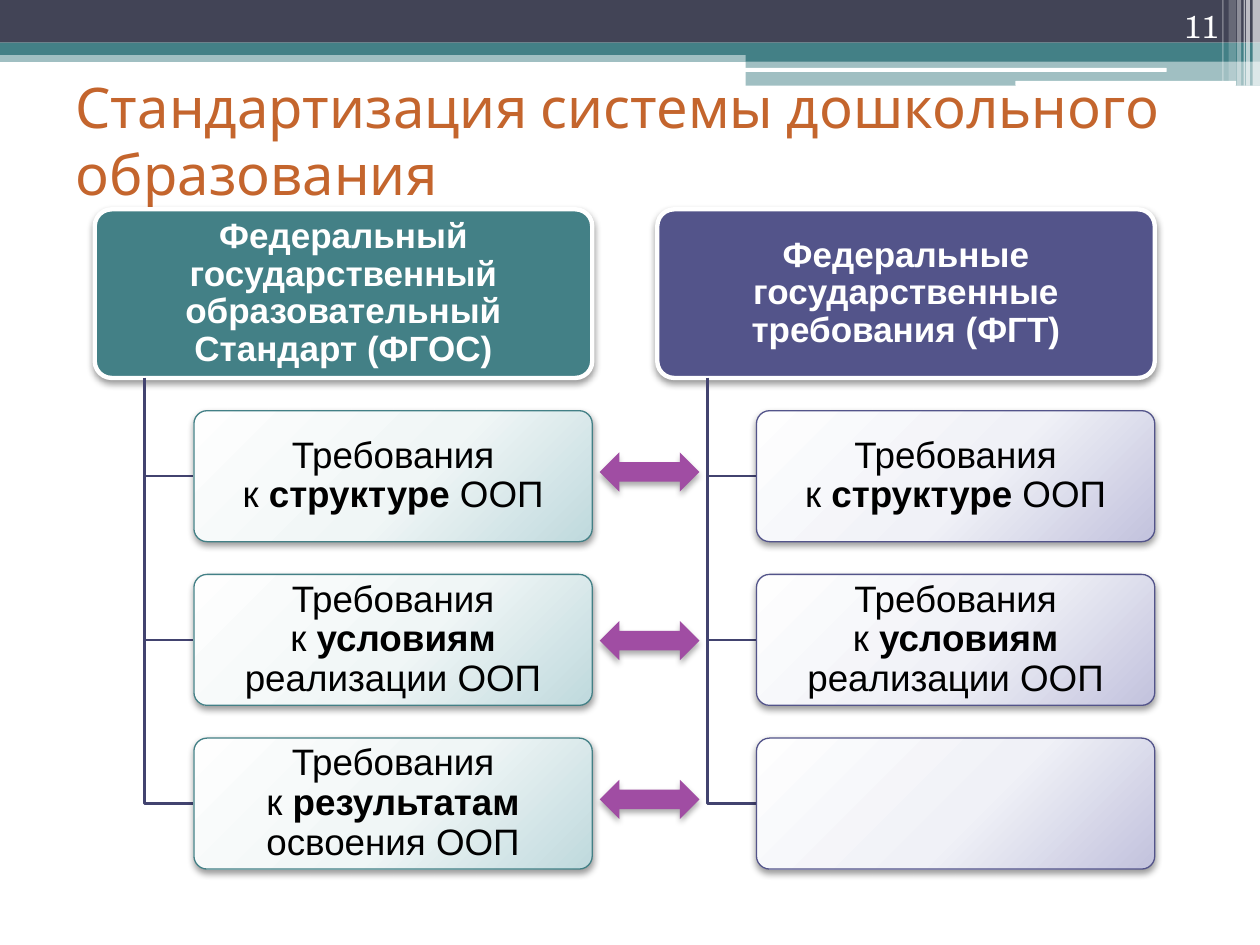
from dataclasses import dataclass

import lxml.etree
import pptx
import pptx.dml.color
import pptx.enum.shapes
import pptx.enum.text
import pptx.oxml.ns
import pptx.util

Cm, Pt = pptx.util.Cm, pptx.util.Pt
MSO = pptx.enum.shapes.MSO_SHAPE
ALIGN = pptx.enum.text.PP_ALIGN
ANCHOR = pptx.enum.text.MSO_ANCHOR
qn = pptx.oxml.ns.qn


@dataclass(frozen=True)
class Theme:
    body_font: str = "Arial"
    title_font: str = "Karla"
    number_font: str = "TeX Gyre Schola"
    title_size: int = 32
    header_size: int = 20
    item_size: int = 21
    number_size: int = 18
    white: str = "FFFFFF"
    black: str = "000000"
    rust: str = "C4652D"
    slate: str = "424456"
    teal: str = "438086"
    indigo: str = "53548A"
    line: str = "42436F"
    purple: str = "A04DA3"
    teal_tints: tuple = ("FEFEFE", "F0F6F6", "BFD9DD")
    indigo_tints: tuple = ("FEFEFE", "F0F1F7", "C2C2DD")


T = Theme()

# left, top, width, height in cm, colour, opacity in percent
BANDS = [
    (0, 1.02, 25.4, 0.23, T.teal, 50),
    (0, 0, 25.4, 0.86, T.slate, 100),
    (0, 0.86, 25.4, 0.25, T.teal, 100),
    (15.03, 0.99, 10.37, 0.25, T.teal, 100),
    (15.03, 1.23, 10.37, 0.5, T.teal, 50),
]
BARS = [(15.01, 1.37, 8.51, 0.08, T.white, 100),
        (20.47, 1.63, 4.45, 0.1, T.white, 100)]
STRIPES = [
    (25.25, 0, 0.15, 1.73, T.white, 65),
    (25.12, 0, 0.08, 1.73, T.white, 65),
    (25.07, 0, 0.03, 1.73, T.white, 60),
    (24.94, 0, 0.08, 1.73, T.white, 40),
    (24.77, 0, 0.15, 1.63, T.white, 20),
    (24.64, 0, 0.03, 1.63, T.white, 30),
]

STRUCTURE = ("структуре", " ООП")
CONDITIONS = ("условиям", " реализации ООП")
RESULTS = ("результатам", " освоения ООП")
COLUMNS = [
    (1.91, T.teal, T.teal_tints,
     ["Федеральный государственный", "образовательный", "Стандарт (ФГОС)"],
     [STRUCTURE, CONDITIONS, RESULTS]),
    (13.25, T.indigo, T.indigo_tints,
     ["Федеральные", "государственные", "требования (ФГТ)"],
     [STRUCTURE, CONDITIONS, None]),
]
HEADER_TOP, HEADER_W, HEADER_H = 4.22, 10.03, 3.4
ITEM_INDENT, ITEM_TOP, ITEM_W, ITEM_H, ITEM_PITCH = 2, 8.28, 8.03, 2.64, 3.3
SPINE_INDENT = 1.01
ARROW_TOPS = (9.12, 12.52, 15.72)


def rgb(color):
    return pptx.dml.color.RGBColor.from_string(color)


def xml_child(parent, tag, **attributes):
    return lxml.etree.SubElement(
        parent, qn(tag), {k: str(v) for k, v in attributes.items()})


def add_shape(s, kind, box, color, opacity=100):
    sp = s.shapes.add_shape(kind, *map(Cm, box))
    sp.shadow.inherit = False
    sp.line.fill.background()
    sp.fill.solid()
    sp.fill.fore_color.rgb = rgb(color)
    if opacity < 100:
        clr = sp._element.spPr.find(".//" + qn("a:srgbClr"))
        xml_child(clr, "a:alpha", val=opacity * 1000)
    return sp


def add_shadow(sp, opacity, blur, distance):
    effects = sp._element.spPr.find(qn("a:effectLst"))
    outer = xml_child(effects, "a:outerShdw", blurRad=Pt(blur), dist=Pt(distance),
                      dir=90 * 60000, rotWithShape=0)
    clr = xml_child(outer, "a:srgbClr", val=T.black)
    xml_child(clr, "a:alpha", val=opacity * 1000)


def fill_radial(sp, tints):
    """Fill with a circular gradient centred beyond the top left corner."""
    sp.fill.gradient()
    grad = sp._element.spPr.find(qn("a:gradFill"))
    grad.clear()
    stops = xml_child(grad, "a:gsLst")
    for position, tint in zip((0, 55, 100), tints):
        stop = xml_child(stops, "a:gs", pos=position * 1000)
        xml_child(stop, "a:srgbClr", val=tint)
    circle = xml_child(grad, "a:path", path="circle")
    xml_child(circle, "a:fillToRect", l=-40000, t=-90000, r=140000, b=190000)


def add_card(s, box, fill, line, line_width, inset):
    sp = add_shape(s, MSO.ROUNDED_RECTANGLE, box, fill)
    sp.adjustments[0] = 0.1
    sp.line.color.rgb = rgb(line)
    sp.line.width = Pt(line_width)
    add_shadow(sp, 40, 4.1, 2)
    tf = sp.text_frame
    tf.word_wrap = True
    tf.vertical_anchor = ANCHOR.MIDDLE
    tf.margin_left = tf.margin_right = Cm(inset)
    tf.margin_top = tf.margin_bottom = Cm(inset - 0.02)
    return sp


def style(p, font, size, color, align, spacing=1.0, bold=None):
    p.alignment = align
    p.line_spacing = spacing
    p.font.name = font
    p.font.size = Pt(size)
    p.font.color.rgb = rgb(color)
    p.font.bold = bold


def add_header(s, left, color, lines):
    sp = add_card(s, (left, HEADER_TOP, HEADER_W, HEADER_H), color, T.white, 2.5, 0.2)
    sp.text_frame.text = "\n".join(lines)
    for p in sp.text_frame.paragraphs:
        style(p, T.body_font, T.header_size, T.white, ALIGN.CENTER, 0.9, True)


def add_elbow(s, x, bottom, right):
    start = HEADER_TOP + HEADER_H
    builder = s.shapes.build_freeform(Cm(x), Cm(start))
    builder.add_line_segments([(Cm(x), Cm(bottom)), (Cm(right), Cm(bottom))], close=False)
    sp = builder.convert_to_shape()
    sp.shadow.inherit = False
    sp.fill.background()
    sp.line.color.rgb = rgb(T.line)
    sp.line.width = Pt(1.5)


def add_item(s, left, top, color, tints, words):
    sp = add_card(s, (left, top, ITEM_W, ITEM_H), T.white, color, 0.75, 0.17)
    fill_radial(sp, tints)
    if words is None:
        return
    p = sp.text_frame.paragraphs[0]
    style(p, T.body_font, T.item_size, T.black, ALIGN.CENTER, 0.9)
    p.add_run().text = "Требования"
    p.add_line_break()
    subject, rest = words
    for text, bold in (("к ", False), (subject, True), (rest, False)):
        r = p.add_run()
        r.text = text
        r.font.bold = bold


def add_column(s, left, color, tints, header, items):
    add_header(s, left, color, header)
    for i, words in enumerate(items):
        top = ITEM_TOP + i * ITEM_PITCH
        item_left = left + ITEM_INDENT
        add_elbow(s, left + SPINE_INDENT, top + ITEM_H / 2, item_left)
        add_item(s, item_left, top, color, tints, words)


def place_title(s):
    sp = s.shapes.title
    sp.left, sp.top, sp.width, sp.height = map(Cm, (1.27, 1.32, 22.86, 3))
    s.shapes._spTree.append(sp._element)  # above the bands
    tf = sp.text_frame
    tf.text = "Стандартизация системы дошкольного образования"
    tf.word_wrap = True
    tf.auto_size = pptx.enum.text.MSO_AUTO_SIZE.NONE
    tf.vertical_anchor = ANCHOR.MIDDLE
    style(tf.paragraphs[0], T.title_font, T.title_size, T.rust, ALIGN.LEFT)


def add_number(s):
    tf = s.shapes.add_textbox(*map(Cm, (22.71, 0, 2.11, 1.02))).text_frame
    tf.text = "11"
    tf.word_wrap = True
    tf.vertical_anchor = ANCHOR.BOTTOM
    style(tf.paragraphs[0], T.number_font, T.number_size, T.white, ALIGN.RIGHT)


def main():
    prs = pptx.Presentation()
    prs.slide_width, prs.slide_height = Cm(25.4), Cm(19.05)
    s = prs.slides.add_slide(prs.slide_layouts[5])
    for kind, group in ((MSO.RECTANGLE, BANDS), (MSO.ROUNDED_RECTANGLE, BARS),
                        (MSO.RECTANGLE, STRIPES)):
        for *box, color, opacity in group:
            add_shape(s, kind, box, color, opacity)
    place_title(s)
    add_number(s)
    for column in COLUMNS:
        add_column(s, *column)
    for top in ARROW_TOPS:
        arrow = add_shape(s, MSO.LEFT_RIGHT_ARROW, (12.09, top, 2.01, 0.79), T.purple)
        add_shadow(arrow, 32, 3.5, 2.2)
    prs.save("out.pptx")


if __name__ == "__main__":
    main()
